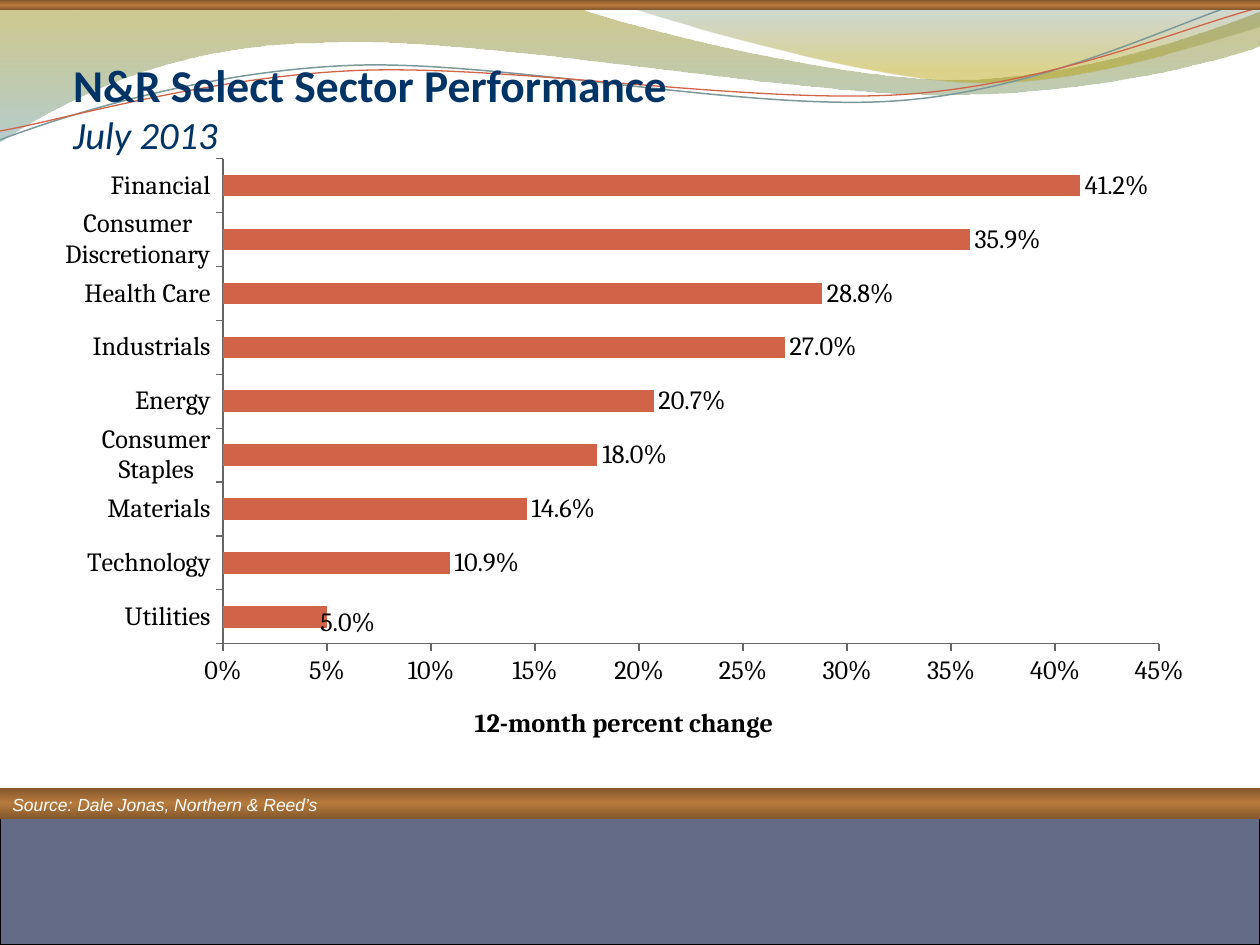
from lxml import etree
from pptx import Presentation
from pptx import util as u
from pptx.chart import data as chart_data
from pptx.dml import color
from pptx.enum import chart as ch, text
from pptx.enum import shapes as sh
from pptx.oxml import parse_xml
from pptx.oxml.ns import nsdecls, qn

COLUMNS, ROWS, FINE = 10, 7.5, 1000
NAVY, RUST, WHITE, BLACK, GREY = "003366", "D16349", "FFFFFF", "000000", "666666"
BRONZE = [(0, "83572C", 100), (50, "B77A3D", 100), (100, "83572C", 100)]

OLIVE_WAVE = [(0, -0.01), (4.4, -0.01),
              (4.76, 0.17, 6.64, 0.63, 7.58, 0.63), (8.53, 0.63, 9.58, 0.26, 10, 0.09),
              (10.01, 0.36), (9.83, 0.44, 8.7, 0.76, 7.46, 0.75),
              (6.22, 0.75, 3.82, 0.28, 2.57, 0.34), (1.29, 0.35, 0.46, 0.83, -0.01, 1.13)]
GOLD_WAVE = [(4.79, -0.01), (5.09, 0.11, 6.82, 0.62, 7.69, 0.65),
             (8.56, 0.69, 9.61, 0.32, 10, 0.21), (10, 0)]
TEAL_CURVE = [(0, 1.11), (0.48, 0.93, 1.58, 0.57, 2.77, 0.52),
              (3.95, 0.47, 5.93, 0.89, 7.13, 0.8), (8.33, 0.71, 9.38, 0.15, 9.98, -0.02)]
RUST_CURVE = [(0, 1.04), (0.47, 0.96, 1.64, 0.61, 2.83, 0.56),
              (4.03, 0.51, 5.97, 0.83, 7.17, 0.75), (8.36, 0.67, 9.41, 0.21, 10, 0.06)]

SECTORS = {
    "Utilities": 0.05, "Technology": 0.109, "Materials": 0.146,
    "Consumer Staples": 0.18, "Energy": 0.207, "Industrials": 0.27,
    "Health Care": 0.288, "Consumer Discretionary": 0.359, "Financial": 0.412,
}


def rgb(value):
    return color.RGBColor.from_string(value)


def format_font(font, name="Calibri", size=18, shade=BLACK, bold=False, italic=False):
    font.name, font.size = name, u.Pt(size)
    font.bold, font.italic = bold, italic
    font.color.rgb = rgb(shade)


def write(para, words, **style):
    span = para.add_run()
    span.text = words
    format_font(span.font, **style)


def bend(shape, steps):
    lines = iter(list(shape.element.iter(qn("a:lnTo"))))
    for step in steps[1:]:
        group = [next(lines) for _ in range(len(step) // 2)]
        if len(group) == 3:
            cubic = etree.Element(qn("a:cubicBezTo"))
            group[0].addprevious(cubic)
            for line in group:
                cubic.append(line[0])
                line.getparent().remove(line)


def place(part, index=0, edge=True, **shares):
    layout = part.find(qn("c:layout"))
    if layout is None:
        layout = etree.Element(qn("c:layout"))
        part.insert(index, layout)
    manual = etree.SubElement(layout, qn("c:manualLayout"))
    if "w" in shares:
        etree.SubElement(manual, qn("c:layoutTarget"), val="inner")
    if edge:
        for side in "xy":
            etree.SubElement(manual, qn(f"c:{side}Mode"), val="edge")
    for side, share in shares.items():
        etree.SubElement(manual, qn(f"c:{side}"), val=str(share))


class Slide:
    def __init__(self, deck):
        self.column = deck.slide_width / COLUMNS
        self.row = deck.slide_height / ROWS
        self.page = deck.slides.add_slide(deck.slide_layouts[5])
        self.page.background.fill.solid()
        self.page.background.fill.fore_color.rgb = rgb(WHITE)

    def frame(self, left, top, width, height):
        return (round(left * self.column), round(top * self.row),
                round(width * self.column), round(height * self.row))

    def paint(self, shape, fill=None, line=None, width=0.75):
        shape.shadow.inherit = False
        if isinstance(fill, list):
            stops = "".join(
                f'<a:gs pos="{pos * 1000}"><a:srgbClr val="{shade}">'
                f'<a:alpha val="{alpha * 1000}"/></a:srgbClr></a:gs>'
                for pos, shade, alpha in fill)
            shape.fill.background()
            blank = shape.element.spPr.find(qn("a:noFill"))
            blank.getparent().replace(blank, parse_xml(
                f'<a:gradFill {nsdecls("a")} rotWithShape="1"><a:gsLst>{stops}</a:gsLst>'
                '<a:lin ang="5400000" scaled="0"/></a:gradFill>'))
        elif fill:
            shape.fill.solid()
            shape.fill.fore_color.rgb = rgb(fill)
        else:
            shape.fill.background()
        if line:
            shape.line.color.rgb = rgb(line)
            shape.line.width = u.Pt(width)
        else:
            shape.line.fill.background()

    def curve(self, steps, **paint):
        points = [(round(step[i] * FINE), round(step[i + 1] * FINE))
                  for step in steps for i in range(0, len(step), 2)]
        builder = self.page.shapes.build_freeform(
            *points[0], scale=(self.column / FINE, self.row / FINE))
        builder.add_line_segments(points[1:], close="fill" in paint)
        shape = builder.convert_to_shape()
        bend(shape, steps)
        self.paint(shape, **paint)

    def band(self, top, height, **paint):
        shape = self.page.shapes.add_shape(
            sh.MSO_SHAPE.RECTANGLE, *self.frame(0, top, COLUMNS, height))
        self.paint(shape, **paint)

    def title(self, heading, subheading, *area):
        box = self.page.shapes.title
        box.element.getparent().append(box.element)
        box.left, box.top, box.width, box.height = self.frame(*area)
        body = box.text_frame
        body.auto_size = text.MSO_AUTO_SIZE.NONE
        body.vertical_anchor = text.MSO_ANCHOR.BOTTOM
        body.margin_left = body.margin_right = body.margin_bottom = 0
        para = body.paragraphs[0]
        para.alignment = text.PP_ALIGN.LEFT
        write(para, heading, size=26, shade=NAVY, bold=True)
        para.add_line_break()
        write(para, subheading, size=22, shade=NAVY, italic=True)

    def note(self, words, *area):
        body = self.page.shapes.add_textbox(*self.frame(*area)).text_frame
        body.word_wrap = True
        write(body.paragraphs[0], words, name="Arial", size=10, shade=WHITE, italic=True)

    def bars(self, values, caption, *area):
        source = chart_data.CategoryChartData(number_format="0.0%")
        source.categories = list(values)
        source.add_series("Series 1", list(values.values()))
        chart = self.page.shapes.add_chart(
            ch.XL_CHART_TYPE.BAR_CLUSTERED, *self.frame(*area), source).chart
        chart.has_legend = chart.has_title = False
        format_font(chart.font)
        plot = chart.plots[0]
        plot.gap_width, plot.vary_by_categories = 150, False
        series = plot.series[0]
        series.format.fill.solid()
        series.format.fill.fore_color.rgb = rgb(RUST)
        labels = series.data_labels
        labels.show_value = True
        labels.number_format, labels.number_format_is_linked = "0.0%", False
        first = series.points[0].data_label
        for label in (labels, first):
            label.position = ch.XL_LABEL_POSITION.OUTSIDE_END
            format_font(label.font, name="Cambria", size=15)
        place(series._element.find(".//" + qn("c:dLbl")), index=1, edge=False,
              x=-0.01, y=0.01)

        for axis in (chart.category_axis, chart.value_axis):
            axis.has_major_gridlines = False
            axis.major_tick_mark = ch.XL_TICK_MARK.OUTSIDE
            axis.minor_tick_mark = ch.XL_TICK_MARK.NONE
            axis.format.line.color.rgb = rgb(GREY)
            format_font(axis.tick_labels.font, name="Cambria", size=15)
        chart.category_axis.tick_label_position = ch.XL_TICK_LABEL_POSITION.LOW
        scale = chart.value_axis
        scale.minimum_scale, scale.maximum_scale, scale.major_unit = 0, 0.45, 0.05
        scale.tick_labels.number_format = "0%"
        scale.tick_labels.number_format_is_linked = False
        write(scale.axis_title.text_frame.paragraphs[0], caption,
              name="Cambria", size=15, bold=True)
        width, height = area[2:]
        place(scale.axis_title._element, x=3.4 / width, y=4.39 / height)
        place(chart.element.find(".//" + qn("c:plotArea")),
              x=1.44 / width, y=0.09 / height, w=7.43 / width, h=3.85 / height)


def main():
    deck = Presentation()
    deck.slide_width, deck.slide_height = u.Inches(COLUMNS), u.Inches(ROWS)
    slide = Slide(deck)
    slide.curve(OLIVE_WAVE, fill=[(0, "978500", 45), (100, "77A5A6", 55)])
    slide.curve(GOLD_WAVE, fill=[(0, "648484", 30), (80, "B49F00", 45)])
    slide.curve(TEAL_CURVE, line="7C999A", width=0.85)
    slide.curve(RUST_CURVE, line=RUST)
    slide.band(0, 0.08, fill=BRONZE)
    slide.band(6.42, 1.08, fill="646B86", line=BLACK)
    slide.band(6.25, 0.25, fill=BRONZE)
    slide.title("N&R Select Sector Performance", "July 2013", 0.58, 0.25, 8.5, 1)
    slide.note("Source: Dale Jonas, Northern & Reed’s", 0, 6.25, 5.17, 0.27)
    slide.bars(SECTORS, "12-month percent change", 0.33, 1.17, 9.25, 4.92)
    deck.save("out.pptx")


if __name__ == "__main__":
    main()
